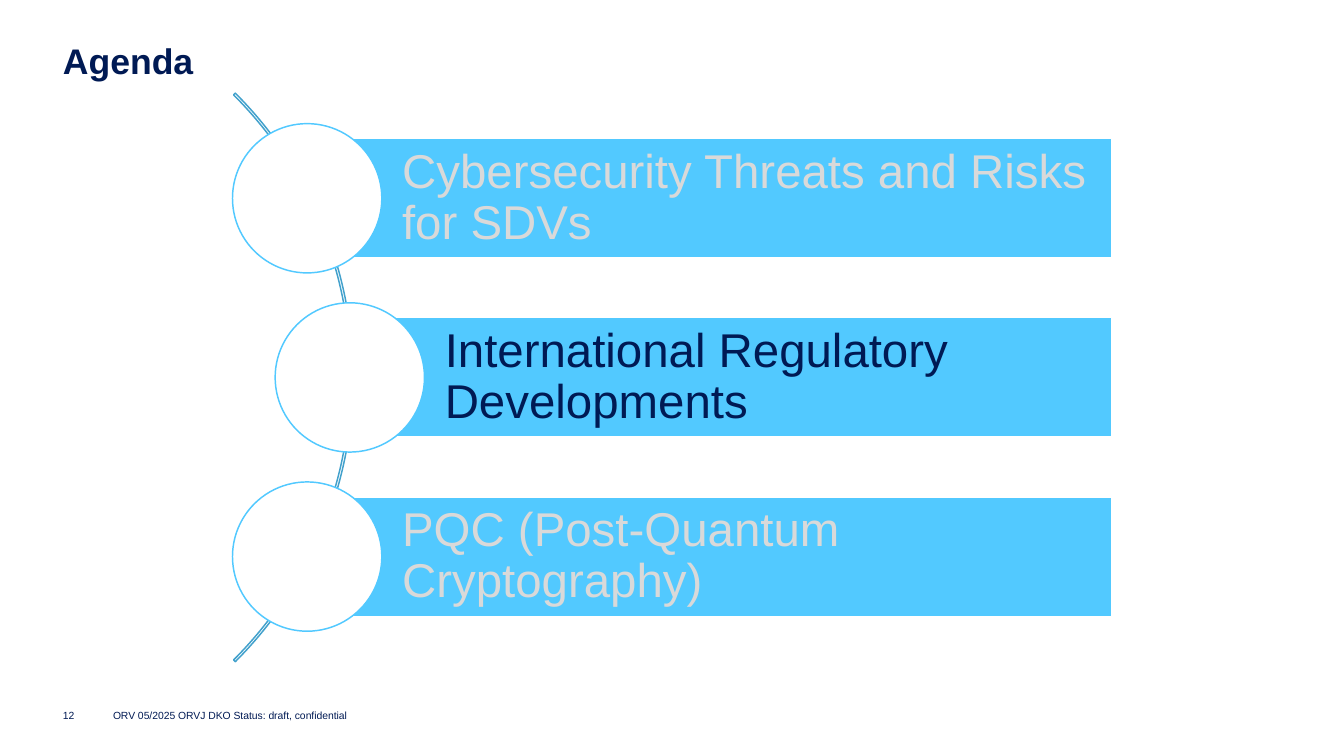
from dataclasses import dataclass

from pptx import Presentation
from pptx import util as u
from pptx.dml.color import RGBColor
from pptx.enum import shapes, text

Inches = u.Inches
Shape = shapes.MSO_SHAPE
Anchor = text.MSO_ANCHOR


@dataclass(frozen=True)
class Theme:
    font: str = "Arial"
    navy: str = "001A54"
    sky: str = "52C9FF"
    arc: str = "42A1CC"
    grey: str = "D9D9D9"
    white: str = "FFFFFF"
    title: int = 24
    item: int = 32
    small: int = 7


THEME = Theme()
ITEMS = [
    # text, active, indent
    ("Cybersecurity Threats and Risks for SDVs", False, 0),
    ("International Regulatory Developments", True, 0.4),
    ("PQC (Post-Quantum Cryptography)", False, 0),
]


def write(shape, words, size, color=THEME.navy, bold=False, anchor=Anchor.TOP,
          inset=(0, 0, 0, 0), wrap=True, leading=1.0):
    frame = shape.text_frame
    frame.word_wrap = wrap
    frame.vertical_anchor = anchor
    (frame.margin_left, frame.margin_top,
     frame.margin_right, frame.margin_bottom) = map(Inches, inset)
    para = frame.paragraphs[0]
    para.alignment = text.PP_ALIGN.LEFT
    para.line_spacing = leading
    run = para.add_run()
    run.text = words
    run.font.name = THEME.font
    run.font.size = u.Pt(size)
    run.font.bold = bold
    run.font.color.rgb = RGBColor.from_string(color)


def label(slide, box, words, size, **style):
    write(slide.shapes.add_textbox(*map(Inches, box)), words, size, **style)


def draw(slide, kind, box, line, fill=None):
    shape = slide.shapes.add_shape(kind, *map(Inches, box))
    shape.shadow.inherit = False
    if fill:
        shape.fill.solid()
        shape.fill.fore_color.rgb = RGBColor.from_string(fill)
    else:
        shape.fill.background()
    shape.line.color.rgb = RGBColor.from_string(line)
    shape.line.width = u.Pt(1)
    return shape


def curve(slide, right, middle, size):
    """Thin quarter ring, bulging to the right edge given."""
    ring = draw(slide, Shape.BLOCK_ARC,
                (right - size, middle - size / 2, size, size), THEME.arc)
    for index, value in enumerate((189, 27, 0.003)):
        ring.adjustments[index] = value


def entry(slide, box, words, active):
    """Bar with a disc centred on its left edge."""
    left, top, width, height = box
    bar = draw(slide, Shape.RECTANGLE, box, THEME.white, THEME.sky)
    write(bar, words, THEME.item, color=THEME.navy if active else THEME.grey,
          anchor=Anchor.MIDDLE, inset=(0.89, 0.09, 0.09, 0.09), leading=0.9)
    disc = height * 1.25
    draw(slide, Shape.OVAL,
         (left - disc / 2, top + (height - disc) / 2, disc, disc),
         THEME.sky, THEME.white)


def agenda(slide, box):
    left, top, width, height = box
    bar = height / (1.5 * len(ITEMS) - 0.5)
    curve(slide, left + 0.43, top + height / 2, 7.54)
    for row, (words, active, indent) in enumerate(ITEMS):
        entry(slide, (left + indent, top + row * bar * 1.5, width - indent, bar),
              words, active)


def footer(slide, box):
    left, top, width, height = box
    style = dict(anchor=Anchor.MIDDLE, wrap=False)
    label(slide, (left, top, 0.39, height), "12", THEME.small, **style)
    label(slide, (left + 0.47, top, width - 0.47, height),
          "ORV 05/2025 ORVJ DKO Status: draft, confidential",
          THEME.small, **style)


def main():
    deck = Presentation()
    deck.slide_width, deck.slide_height = Inches(12.6), Inches(7.09)
    slide = deck.slides.add_slide(deck.slide_layouts[6])
    label(slide, (0.59, 0.39, 11.42, 0.4), "Agenda", THEME.title,
          bold=True, leading=0.97)
    agenda(slide, (2.88, 1.3, 7.54, 4.48))
    footer(slide, (0.59, 6.61, 5.51, 0.2))
    deck.save("out.pptx")


if __name__ == "__main__":
    main()
